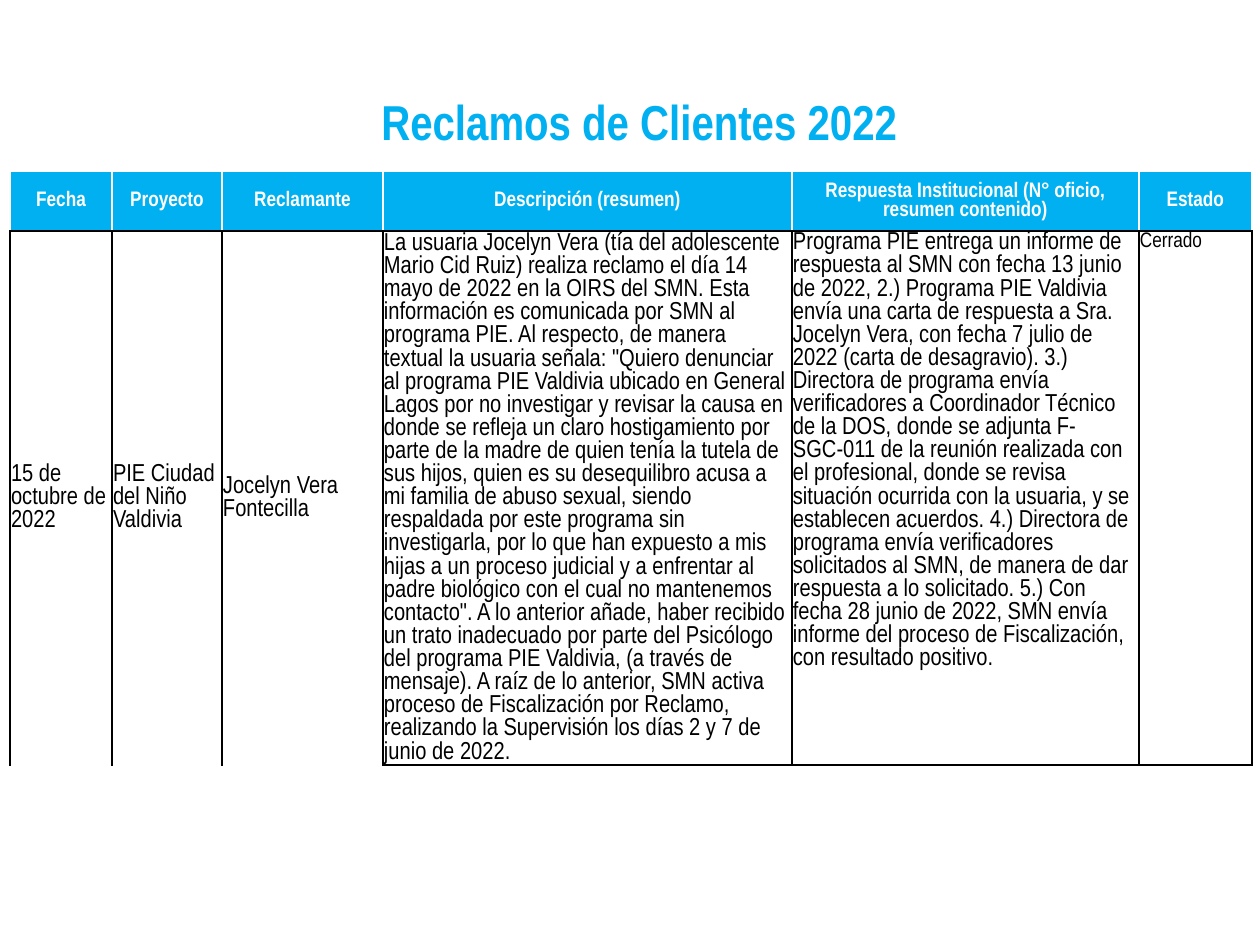
from pptx import Presentation
from pptx.dml.color import RGBColor as Rgb
from pptx.enum.text import MSO_ANCHOR as Anchor, PP_ALIGN as Align
from pptx.oxml.ns import qn
from pptx.util import Pt
from lxml.etree import SubElement as Sub

PX = 914400 // 126
BLUE, WHITE, BLACK = "00B0F0", "FFFFFF", "000000"
FACE = "Arial Narrow"
WIDTHS = [102, 110, 161, 409, 347, 113]
HEIGHTS = [60, 534]
HEADS = [
    "Fecha", "Proyecto", "Reclamante", "Descripción (resumen)",
    "Respuesta Institucional (N° oficio, resumen contenido)", "Estado",
]
FACTS = (
    "La usuaria Jocelyn Vera (tía del adolescente Mario Cid Ruiz) realiza "
    "reclamo el día 14 mayo de 2022 en la OIRS del SMN. Esta información es "
    "comunicada por SMN al programa PIE."
)
QUOTE = (
    'Al respecto, de manera textual la usuaria señala: "Quiero denunciar al '
    "programa PIE Valdivia ubicado en General Lagos por no investigar y revisar "
    "la causa en donde se refleja un claro hostigamiento por parte de la madre "
    "de quien tenía la tutela de sus hijos, quien es su desequilibro acusa a mi "
    "familia de abuso sexual, siendo respaldada por este programa sin "
    "investigarla, por lo que han expuesto a mis hijas a un proceso judicial y "
    "a enfrentar al padre biológico con el cual no mantenemos contacto\"."
)
STEPS = (
    "A lo anterior añade, haber recibido un trato inadecuado por parte del "
    "Psicólogo del programa PIE Valdivia, (a través de mensaje). A raíz de lo "
    "anterior, SMN activa proceso de Fiscalización por Reclamo, realizando la "
    "Supervisión los días 2 y 7 de junio de 2022."
)
REPLY = (
    "Programa PIE entrega un informe de respuesta al SMN con fecha 13 junio de "
    "2022, 2.) Programa PIE Valdivia envía una carta de respuesta a Sra. Jocelyn "
    "Vera, con fecha 7 julio de 2022 (carta de desagravio). 3.) Directora de "
    "programa envía verificadores a Coordinador Técnico de la DOS, donde se "
    "adjunta F-SGC-011 de la reunión realizada con el profesional, donde se "
    "revisa situación ocurrida con la usuaria, y se establecen acuerdos. 4.) "
    "Directora de programa envía verificadores solicitados al SMN, de manera de "
    "dar respuesta a lo solicitado. 5.) Con fecha 28 junio de 2022, SMN envía "
    "informe del proceso de Fiscalización, con resultado positivo."
)
CASE = [
    "15 de octubre de 2022", "PIE Ciudad del Niño Valdivia",
    "Jocelyn Vera Fontecilla", " ".join([FACTS, QUOTE, STEPS]), REPLY, "Cerrado",
]


def color(code):
    """Turn a hex string into a colour."""
    return Rgb.from_string(code)


def style(para, size, code, bold, align):
    """Format a paragraph and its runs."""
    para.alignment = align
    for run in para.runs:
        font = run.font
        font.name, font.size, font.bold = FACE, Pt(size), bold
        font.color.rgb = color(code)


def border(cell, sides, code):
    """Draw one-point lines on the given sides of a cell."""
    props = cell._tc.get_or_add_tcPr()
    for side in sides:
        line = Sub(props, qn(f"a:ln{side}"), w=str(Pt(1)))
        Sub(Sub(line, qn("a:solidFill")), qn("a:srgbClr"), val=code)


def write(cell, text, size, code, bold, align, anchor, fill):
    """Fill a cell with formatted text."""
    cell.margin_left = cell.margin_right = cell.margin_top = PX
    cell.margin_bottom = 0
    cell.vertical_anchor = anchor
    cell.fill.solid()
    cell.fill.fore_color.rgb = color(fill)
    cell.text_frame.text = text
    style(cell.text_frame.paragraphs[0], size, code, bold, align)


def add_title(slide, box, text):
    """Place the slide title in its box."""
    title = slide.shapes.title
    title.left, title.top, title.width, title.height = [n * PX for n in box]
    frame = title.text_frame
    frame.text = text
    frame.vertical_anchor = Anchor.MIDDLE
    style(frame.paragraphs[0], 28, BLUE, True, Align.CENTER)


def add_claims(slide, left, top):
    """Place the table of claims with its corner at the given point."""
    size = sum(WIDTHS), sum(HEIGHTS)
    box = [n * PX for n in (left, top, *size)]
    table = slide.shapes.add_table(2, len(HEADS), *box).table
    for row, high in zip(table.rows, HEIGHTS):
        row.height = high * PX
    for col, (wide, head, text) in enumerate(zip(WIDTHS, HEADS, CASE)):
        table.columns[col].width = wide * PX
        top_cell, cell = table.cell(0, col), table.cell(1, col)
        border(top_cell, "LRT", WHITE)
        border(top_cell, "B", BLACK)
        write(top_cell, head, 12, WHITE, True, Align.CENTER, Anchor.MIDDLE, BLUE)
        border(cell, "LRT" if col < 3 else "LRTB", BLACK)
        anchor = Anchor.MIDDLE if col < 4 else Anchor.TOP
        points = 12 if col == 5 else 14
        write(cell, text, points, BLACK, False, Align.LEFT, anchor, WHITE)


def main():
    """Build and save the slide."""
    deck = Presentation()
    deck.slide_width, deck.slide_height = 1260 * PX, 945 * PX
    slide = deck.slides.add_slide(deck.slide_layouts[5])
    add_claims(slide, 10, 171)
    add_title(slide, (183, 70, 912, 102), "Reclamos de Clientes 2022")
    deck.save("out.pptx")


if __name__ == "__main__":
    main()
